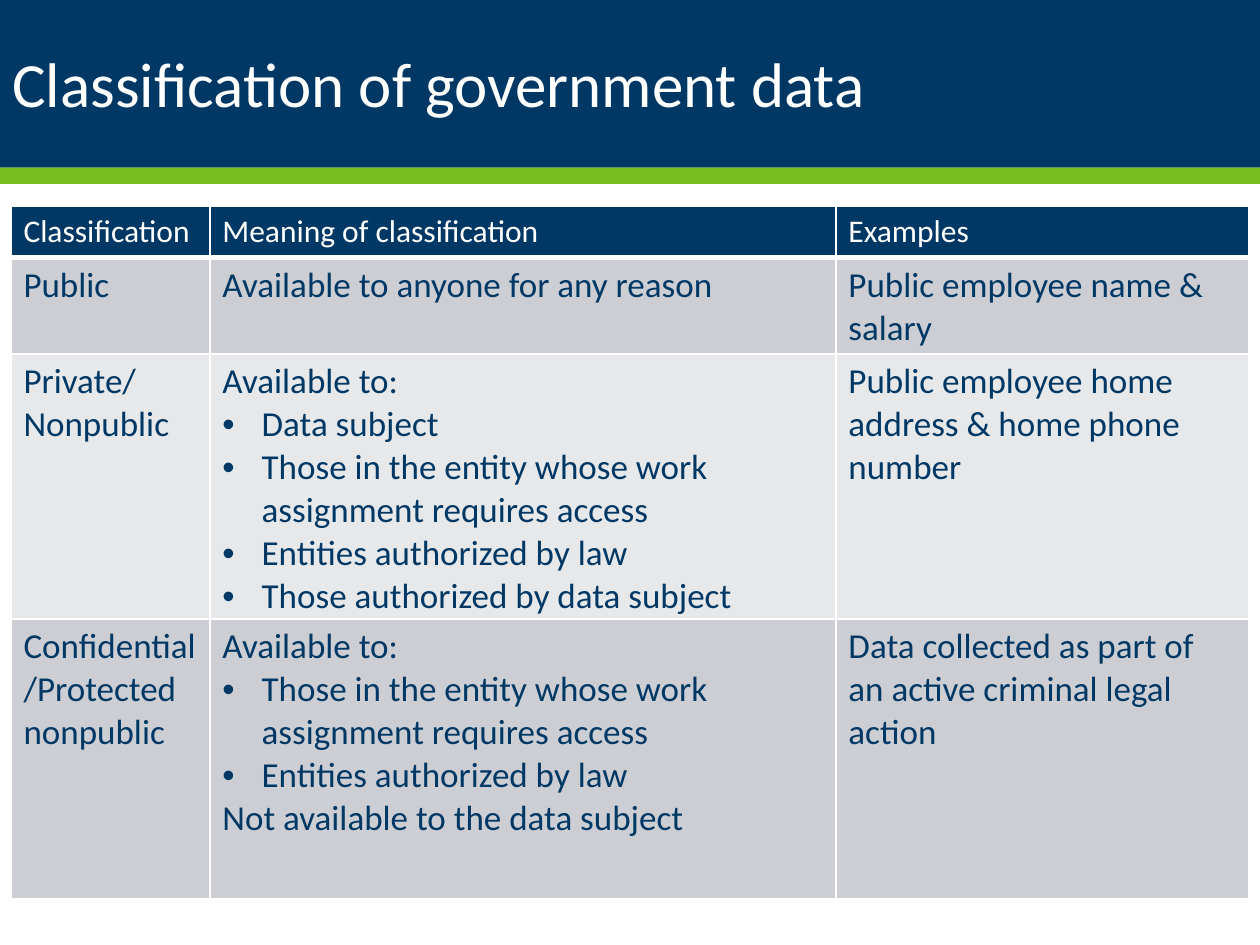
from lxml.etree import SubElement
from pptx import Presentation
from pptx.dml.color import RGBColor
from pptx.enum.shapes import MSO_SHAPE as Preset
from pptx.enum.text import MSO_ANCHOR as Anchor
from pptx.oxml.ns import qn
from pptx.util import Cm, Pt

COLOURS = {
    "navy": "003865",
    "green": "78BE21",
    "white": "FFFFFF",
    "dark band": "CCCED3",
    "light band": "E7E8EA",
}
FONT = "Calibri"
BULLET = "• "  # marks a bulleted paragraph in ROWS
WORK_ACCESS = BULLET + "Those in the entity whose work assignment requires access"
BY_LAW = BULLET + "Entities authorized by law"

COLUMN_WIDTHS = [4.01, 12.62, 8.33]
ROW_HEIGHTS = [1.04, 1.8, 4.95, 5.64]
# Each cell is a list of paragraphs
ROWS = [
    [["Classification"], ["Meaning of classification"], ["Examples"]],
    [["Public"], ["Available to anyone for any reason"],
     ["Public employee name & salary"]],
    [["Private/", "Nonpublic"],
     ["Available to:", BULLET + "Data subject", WORK_ACCESS, BY_LAW,
      BULLET + "Those authorized by data subject"],
     ["Public employee home address & home phone number"]],
    [["Confidential/Protected nonpublic"],
     ["Available to:", WORK_ACCESS, BY_LAW, "Not available to the data subject"],
     ["Data collected as part of an active criminal legal action"]],
]


def colour(name):
    return RGBColor.from_string(COLOURS[name])


def add_span(para, text, size, colour_name):
    span = para.add_run()
    span.text = text
    span.font.name = FONT
    span.font.size = Pt(size)
    span.font.bold = False
    span.font.color.rgb = colour(colour_name)


def add_band(page, left, top, width, height, colour_name):
    band = page.shapes.add_shape(Preset.RECTANGLE, left, top, width, height)
    band.shadow.inherit = False
    band.fill.solid()
    band.fill.fore_color.rgb = colour(colour_name)
    band.line.fill.background()


def add_header(page, left, top, width, height, title):
    # Navy band with a green stripe below
    add_band(page, left, top, width, height, "navy")
    add_band(page, left, top + height, width, Cm(0.33), "green")

    # Title
    box = page.shapes.add_textbox(left, top + Cm(0.48), width - Cm(3.5), Cm(2.54))
    frame = box.text_frame
    frame.word_wrap = True
    frame.vertical_anchor = Anchor.MIDDLE
    para = frame.paragraphs[0]
    para.line_spacing = 0.9
    add_span(para, title, 36, "white")


def set_borders(cell, bottom_width):
    properties = cell._tc.get_or_add_tcPr()
    for side, width in (("L", 1), ("R", 1), ("T", 1), ("B", bottom_width)):
        line = SubElement(properties, qn(f"a:ln{side}"), w=str(Pt(width)))
        fill = SubElement(line, qn("a:solidFill"))
        SubElement(fill, qn("a:srgbClr"), val=COLOURS["white"])


def set_bullet(para):
    properties = para._p.get_or_add_pPr()
    properties.set("marL", str(Cm(0.79)))
    properties.set("indent", str(-Cm(0.79)))
    SubElement(properties, qn("a:buFont"), typeface="Arial")
    SubElement(properties, qn("a:buChar"), char=BULLET.strip())


def fill_cell(cell, lines, size, text_colour, fill_colour, bottom_width):
    set_borders(cell, bottom_width)
    cell.fill.solid()
    cell.fill.fore_color.rgb = colour(fill_colour)
    frame = cell.text_frame
    for index, line in enumerate(lines):
        para = frame.add_paragraph() if index else frame.paragraphs[0]
        if line.startswith(BULLET):
            set_bullet(para)
        add_span(para, line.removeprefix(BULLET), size, text_colour)


def add_classification_table(page, left, top):
    table = page.shapes.add_table(
        len(ROWS), len(COLUMN_WIDTHS), left, top,
        Cm(sum(COLUMN_WIDTHS)), Cm(sum(ROW_HEIGHTS))).table
    for column, width in zip(table.columns, COLUMN_WIDTHS):
        column.width = Cm(width)
    for row, height in zip(table.rows, ROW_HEIGHTS):
        row.height = Cm(height)

    # Heading row, then alternating bands
    for number, texts in enumerate(ROWS):
        if number == 0:
            style = (18, "white", "navy", 3)
        else:
            style = (20, "navy", "dark band" if number % 2 else "light band", 1)
        for cell, lines in zip(table.rows[number].cells, texts):
            fill_cell(cell, lines, *style)


def main():
    deck = Presentation()
    deck.slide_width, deck.slide_height = Cm(25.4), Cm(19.05)
    page = deck.slides.add_slide(deck.slide_layouts[6])
    add_header(page, Cm(0), Cm(0), deck.slide_width, Cm(3.38),
               "Classification of government data")
    add_classification_table(page, Cm(0.22), Cm(4.15))
    deck.save("out.pptx")


if __name__ == "__main__":
    main()
